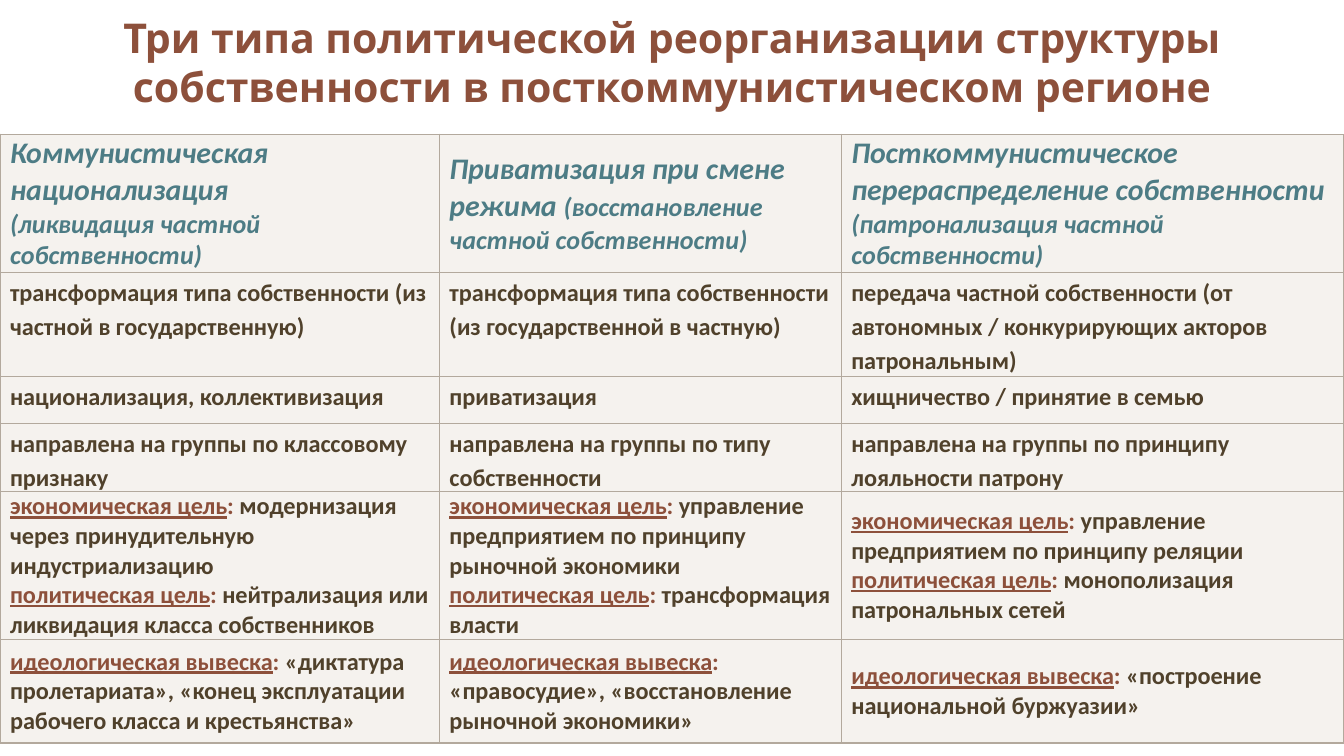
import copy
from dataclasses import dataclass

import pptx
import pptx.dml.color
import pptx.enum.text
import pptx.oxml
import pptx.oxml.ns
import pptx.util
from pptx.util import Inches

ANCHOR = pptx.enum.text.MSO_ANCHOR
ALIGN = pptx.enum.text.PP_ALIGN


@dataclass(frozen=True)
class Theme:
    rust: str = "8D503B"
    teal: str = "4D7C85"
    brown: str = "50412B"
    sand: str = "EFEAE4"
    rule: str = "B3A99D"
    alpha: int = 60
    thick: float = 1
    thin: float = 0.5
    title: int = 22
    head: int = 16
    sub: int = 14
    body: int = 13
    sans: str = "Open Sans"
    text: str = "Calibri"


THEME = Theme()


def style(size, color, name=THEME.text, **more):
    return {"size": size, "color": color, "name": name, "bold": True, **more}


STYLES = {
    "title": style(THEME.title, THEME.rust, THEME.sans),
    "head": style(THEME.head, THEME.teal, italic=True),
    "sub": style(THEME.sub, THEME.teal, italic=True),
    "body": style(THEME.body, THEME.brown),
    "label": style(THEME.body, THEME.rust, underline=True),
    "colon": style(THEME.body, THEME.rust),
}
LOOSE = {"line_spacing": 1.15, "space_after": pptx.util.Pt(10)}
INSET = pptx.util.Pt(5.4)

TITLE = "Три типа политической реорганизации структуры собственности в посткоммунистическом регионе"
HEADS = [
    ("Коммунистическая национализация\n", "(ликвидация частной собственности)"),
    ("Приватизация при смене режима ", "(восстановление частной собственности)"),
    ("Посткоммунистическое перераспределение собственности\n", "(патронализация частной собственности)"),
]
PLAIN = [
    ["трансформация типа собственности (из частной в государственную)",
     "трансформация типа собственности (из государственной в частную)",
     "передача частной собственности (от автономных / конкурирующих акторов патрональным)"],
    ["национализация, коллективизация", "приватизация", "хищничество / принятие в семью"],
    ["направлена на группы по классовому признаку",
     "направлена на группы по типу собственности",
     "направлена на группы по принципу лояльности патрону"],
]
ECON, POLIT, SIGN = "экономическая цель", "политическая цель", "идеологическая вывеска"
# Each cell is a list of paragraphs, each paragraph a list of (label, text).
GOALS = [
    [[[(ECON, "модернизация через принудительную индустриализацию\n"),
       (POLIT, "нейтрализация или ликвидация класса собственников")]],
     [[(ECON, "управление предприятием по принципу рыночной экономики\n"),
       (POLIT, "трансформация власти")]],
     [[(ECON, "управление предприятием по принципу реляции")],
      [(POLIT, "монополизация патрональных сетей")]]],
    [[[(SIGN, "«диктатура пролетариата», «конец эксплуатации рабочего класса и крестьянства»")]],
     [[(SIGN, "«правосудие», «восстановление рыночной экономики»")]],
     [[(SIGN, "«построение национальной буржуазии»")]]],
]
COLS = [3.27, 2.99, 3.74]
ROWS = [1.03, 0.77, 0.35, 0.51, 1.1, 0.77]


def apply(item, values):
    for key, value in values.items():
        setattr(item, key, value)


def rgb(code):
    return pptx.dml.color.RGBColor.from_string(code)


def add_run(para, kind, text):
    """Add a styled run; a closing newline becomes a line break of the same size."""
    run = para.add_run()
    run.text = text.rstrip("\n")
    values = dict(STYLES[kind])
    run.font.color.rgb = rgb(values.pop("color"))
    apply(run.font, {**values, "size": pptx.util.Pt(values["size"])})
    if text.endswith("\n"):
        para.add_line_break()
        para._p[-1].append(copy.deepcopy(run._r.rPr))


def write(frame, paras, form):
    for i, runs in enumerate(paras):
        para = frame.add_paragraph() if i else frame.paragraphs[0]
        apply(para, form)
        for kind, text in runs:
            add_run(para, kind, text)


def add_title(slide, left, top, width, height):
    frame = slide.shapes.add_textbox(left, top, width, height).text_frame
    apply(frame, {"word_wrap": True, "vertical_anchor": ANCHOR.MIDDLE})
    write(frame, [[("title", TITLE)]], {"alignment": ALIGN.CENTER})


def paint(cell, edges):
    """Fill the cell and rule its sides; edges maps L, R, T, B to points."""
    cell.fill.solid()
    cell.fill.fore_color.rgb = rgb(THEME.sand)
    props = cell._tc.tcPr
    space = pptx.oxml.ns.nsdecls("a")
    tint = props.find(".//" + pptx.oxml.ns.qn("a:srgbClr"))
    tint.append(pptx.oxml.parse_xml(f'<a:alpha {space} val="{THEME.alpha * 1000}"/>'))
    for i, (side, width) in enumerate(edges.items()):
        props.insert(i, pptx.oxml.parse_xml(
            f'<a:ln{side} {space} w="{pptx.util.Pt(width)}"><a:solidFill>'
            f'<a:srgbClr val="{THEME.rule}"/></a:solidFill></a:ln{side}>'))


def grid():
    """Return rows of (cells, loose), each cell being paragraphs of styled runs."""
    rows = [([[[("head", head), ("sub", sub)]] for head, sub in HEADS], False)]
    rows += [([[[("body", text)]] for text in row], True) for row in PLAIN]
    for row in GOALS:
        cells = [[[run for label, text in para
                   for run in (("label", label), ("colon", ": "), ("body", text))]
                  for para in cell] for cell in row]
        rows.append((cells, False))
    return rows


def add_grid(slide, left, top, width, height):
    table = slide.shapes.add_table(len(ROWS), len(COLS), left, top, width, height).table
    apply(table, {"first_row": False, "horz_banding": False})
    for col, size in zip(table.columns, COLS):
        col.width = round(width * size / sum(COLS))
    for row, size in zip(table.rows, ROWS):
        row.height = round(height * size / sum(ROWS))
    for r, (cells, loose) in enumerate(grid()):
        for c, paras in enumerate(cells):
            cell = table.cell(r, c)
            apply(cell, {
                "margin_left": INSET, "margin_right": INSET,
                "margin_top": Inches(0.01 if loose else 0), "margin_bottom": 0,
                "vertical_anchor": ANCHOR.TOP if loose else ANCHOR.MIDDLE,
            })
            write(cell.text_frame, paras, LOOSE if loose else {})
            outer = {"L": c == 0, "R": c == len(COLS) - 1,
                     "T": r == 0, "B": r == len(ROWS) - 1}
            paint(cell, {side: THEME.thick if out else THEME.thin
                         for side, out in outer.items()})


def main():
    deck = pptx.Presentation()
    wide = Inches(10)
    apply(deck, {"slide_width": wide, "slide_height": wide * 9 // 16})
    slide = deck.slides.add_slide(deck.slide_layouts[6])
    add_title(slide, Inches(0.12), 0, Inches(9.76), Inches(0.92))
    add_grid(slide, 0, Inches(1), wide, Inches(sum(ROWS)))
    deck.save("out.pptx")


if __name__ == "__main__":
    main()
